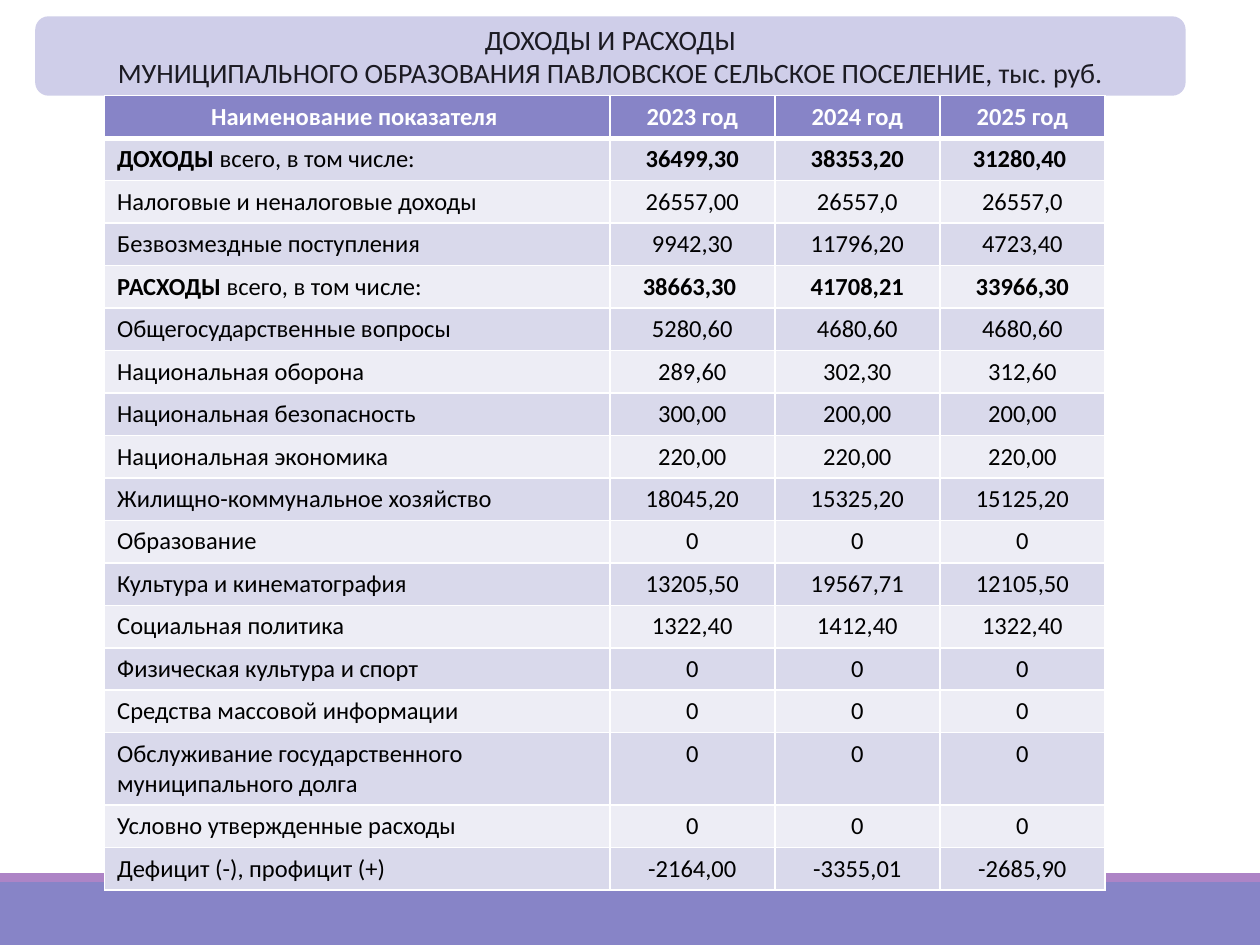
from lxml.etree import SubElement as Sub
from pptx import Presentation as Deck
from pptx.dml.color import RGBColor as Rgb
from pptx.enum.shapes import MSO_SHAPE as Kind
from pptx.enum.text import MSO_ANCHOR as Anchor, PP_ALIGN as Align
from pptx.oxml.ns import qn
from pptx.util import Inches, Pt

WIDE, HIGH = 10, 7.5
FONT = "Calibri"
HUES = {
    "head": "8784C7",
    "strip": "AD84C6",
    "title": "CFCEE9",
    "odd": "D9D9EB",
    "even": "EDEDF5",
    "white": "FFFFFF",
    "black": "000000",
    "ink": "1B1A22",
}
TITLE = (
    "ДОХОДЫ И РАСХОДЫ\n"
    "МУНИЦИПАЛЬНОГО ОБРАЗОВАНИЯ ПАВЛОВСКОЕ СЕЛЬСКОЕ ПОСЕЛЕНИЕ, тыс. руб."
)
TOTAL = "всего, в том числе:"
ROWS = [
    ("Наименование показателя ", "2023 год", "2024 год", "2025 год"),
    ("ДОХОДЫ " + TOTAL, "36499,30", "38353,20", "31280,40 "),
    ("Налоговые и неналоговые доходы", "26557,00", "26557,0", "26557,0"),
    ("Безвозмездные поступления", "9942,30", "11796,20", "4723,40"),
    ("РАСХОДЫ " + TOTAL, "38663,30 ", "41708,21", "33966,30"),
    ("Общегосударственные вопросы", "5280,60", "4680,60", "4680,60"),
    ("Национальная оборона", "289,60", "302,30", "312,60"),
    ("Национальная безопасность", "300,00", "200,00", "200,00"),
    ("Национальная экономика", "220,00", "220,00", "220,00"),
    ("Жилищно-коммунальное хозяйство", "18045,20", "15325,20", "15125,20"),
    ("Образование", "0", "0", "0"),
    ("Культура и кинематография", "13205,50", "19567,71", "12105,50"),
    ("Социальная политика", "1322,40", "1412,40", "1322,40"),
    ("Физическая культура и спорт", "0", "0", "0"),
    ("Средства массовой информации", "0", "0", "0"),
    ("Обслуживание государственного муниципального долга", "0", "0", "0"),
    ("Условно утвержденные расходы", "0", "0", "0"),
    ("Дефицит (-), профицит (+)", "-2164,00", "-3355,01", "-2685,90"),
]
COLS = (4.01, 1.31, 1.31, 1.31)
LINE, TALL = 0.31, 0.53
LONG = 15


def paint(fill, hue):
    fill.solid()
    fill.fore_color.rgb = Rgb.from_string(HUES[hue])


def style(run, size, hue, bold=False):
    font = run.font
    font.name, font.size, font.bold = FONT, Pt(size), bold
    font.color.rgb = Rgb.from_string(HUES[hue])


def add_block(slide, kind, hue, left, top, width, height):
    box = slide.shapes.add_shape(
        kind, *(Inches(size) for size in (left, top, width, height))
    )
    box.shadow.inherit = False
    paint(box.fill, hue)
    box.line.fill.background()
    return box


def add_title(slide):
    box = add_block(slide, Kind.ROUNDED_RECTANGLE, "title", 0.28, 0.13, 9.13, 0.63)
    frame = box.text_frame
    frame.word_wrap = True
    frame.vertical_anchor = Anchor.MIDDLE
    frame.text = TITLE
    for para in frame.paragraphs:
        para.alignment = Align.CENTER
        style(para.runs[0], 16, "ink")


def add_edges(cell, top, base):
    props = cell._tc.get_or_add_tcPr()
    for side, width in zip("LRTB", (1, 1, top, base)):
        edge = Sub(props, qn("a:ln" + side), w=str(Pt(width)))
        fill = Sub(edge, qn("a:solidFill"))
        Sub(fill, qn("a:srgbClr"), val=HUES["white"])


def fill_cell(cell, text, row, col):
    head = row == 0
    total = TOTAL in ROWS[row][0]
    add_edges(cell, 3 if row == 1 else 1, 3 if head else 1)
    paint(cell.fill, "head" if head else "odd" if row % 2 else "even")
    para = cell.text_frame.paragraphs[0]
    para.alignment = Align.CENTER if head or col else Align.LEFT
    hue = "white" if head else "black"
    if total and not col:
        para.text = text.removesuffix(TOTAL)
        rest = para.add_run()
        rest.text = TOTAL
        style(rest, 14, hue)
    else:
        para.text = text
    style(para.runs[0], 14, hue, head or total)


def add_budget(slide):
    sizes = [TALL if row == LONG else LINE for row in range(len(ROWS))]
    area = (0.83, 0.76, sum(COLS), sum(sizes))
    grid = slide.shapes.add_table(
        len(ROWS), len(COLS), *(Inches(size) for size in area)
    ).table
    for col, width in zip(grid.columns, COLS):
        col.width = Inches(width)
    for row, size in zip(grid.rows, sizes):
        row.height = Inches(size)
    for row, texts in enumerate(ROWS):
        for col, text in enumerate(texts):
            fill_cell(grid.cell(row, col), text, row, col)


def main():
    deck = Deck()
    deck.slide_width, deck.slide_height = Inches(WIDE), Inches(HIGH)
    slide = deck.slides.add_slide(deck.slide_layouts[6])
    foot, strip = HIGH / 15, 0.07
    add_block(slide, Kind.RECTANGLE, "head", 0, HIGH - foot, WIDE, foot)
    add_block(slide, Kind.RECTANGLE, "strip", 0, HIGH - foot - strip, WIDE, strip)
    add_title(slide)
    add_budget(slide)
    deck.save("out.pptx")


if __name__ == "__main__":
    main()
